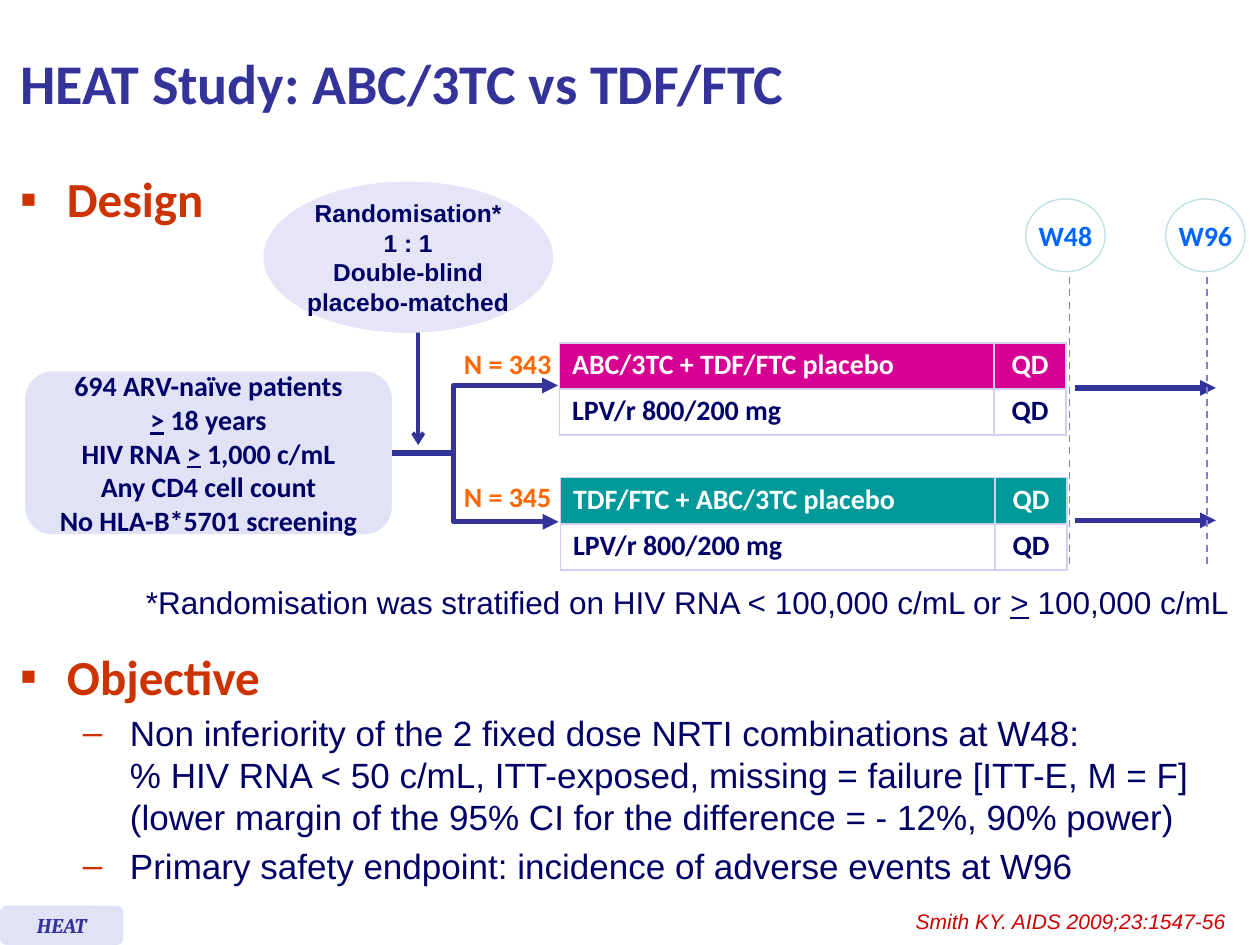
from dataclasses import dataclass
from typing import Optional

from lxml.etree import SubElement
from pptx import Presentation
from pptx.dml.color import RGBColor
from pptx.enum.dml import MSO_LINE
from pptx.enum.shapes import MSO_CONNECTOR, MSO_SHAPE
from pptx.enum.text import MSO_ANCHOR, MSO_AUTO_SIZE, PP_ALIGN
from pptx.oxml.ns import qn
from pptx.util import Cm, Pt

INDIGO = RGBColor(0x33, 0x33, 0x99)
NAVY = RGBColor(0x00, 0x00, 0x66)
RUST = RGBColor(0xCC, 0x33, 0x00)
RED = RGBColor(0xCC, 0x00, 0x00)
ORANGE = RGBColor(0xFF, 0x66, 0x00)
BLUE = RGBColor(0x00, 0x66, 0xFF)
MAGENTA = RGBColor(0xD6, 0x00, 0x93)
TEAL = RGBColor(0x00, 0x99, 0x99)
WHITE = RGBColor(0xFF, 0xFF, 0xFF)
LAVENDER = RGBColor(0xE2, 0xE2, 0xF6)
PALE_LAVENDER = RGBColor(0xE5, 0xE5, 0xF7)
PALE_CYAN = RGBColor(0xBB, 0xE0, 0xE3)
DASH_VIOLET = RGBColor(0x7E, 0x7E, 0xD4)
BORDER = RGBColor(0xD0, 0xD0, 0xF0)


@dataclass
class Style:
    size: float
    color: RGBColor
    name: str = "Calibri"
    bold: bool = True
    italic: bool = False


@dataclass
class Bullet:
    mark: str
    left: float


@dataclass
class Arm:
    label: str
    label_top: float
    regimen: str
    color: RGBColor
    left: float
    top: float
    arrow_y: float


HEADING = Style(28, RUST)
DETAIL = Style(20, NAVY, "Arial", bold=False)
HEADING_BULLET = Bullet("▪", 0.95)
DETAIL_BULLET = Bullet("–", 2.22)
ARMS = [
    Arm("N = 343", 6.86, "ABC/3TC + TDF/FTC placebo", MAGENTA, 11.28, 6.91, 7.82),
    Arm("N = 345", 9.55, "TDF/FTC + ABC/3TC placebo", TEAL, 11.3, 9.63, 10.49),
]
VISITS = [("W48", 20.68, 21.56), ("W96", 23.5, 24.33)]


def write(para, text: str, style: Style, align=PP_ALIGN.LEFT) -> None:
    """Fill a paragraph; a ">" stands for "at least" and is underlined."""
    before, sign, after = text.partition(">")
    para.text = before
    for piece in filter(None, (sign, after)):
        para.add_run().text = piece
    para.alignment = align
    for span in para.runs:
        font = span.font
        font.size, font.name = Pt(style.size), style.name
        font.bold, font.italic = style.bold, style.italic
        font.color.rgb = style.color
        if span.text == ">":
            font.underline = True


def write_lines(frame, lines: list[str], style: Style, align=PP_ALIGN.LEFT) -> None:
    for index, line in enumerate(lines):
        para = frame.add_paragraph() if index else frame.paragraphs[0]
        write(para, line, style, align)


def add_bullet(para, bullet: Bullet) -> None:
    properties = para._p.get_or_add_pPr()
    properties.set("marL", str(Cm(bullet.left)))
    properties.set("indent", str(-Cm(HEADING_BULLET.left)))
    color = SubElement(properties, qn("a:buClr"))
    SubElement(color, qn("a:srgbClr")).set("val", str(RUST))
    SubElement(properties, qn("a:buFont")).set("typeface", "Arial")
    SubElement(properties, qn("a:buChar")).set("char", bullet.mark)


def add_text(page, left: float, top: float, width: float, height: float,
             text: str, style: Style, align=PP_ALIGN.LEFT, wrap=True):
    box = page.shapes.add_textbox(Cm(left), Cm(top), Cm(width), Cm(height))
    box.text_frame.word_wrap = wrap
    write(box.text_frame.paragraphs[0], text, style, align)
    return box


def add_box(page, kind, left: float, top: float, width: float, height: float,
            fill: RGBColor, lines: list[str], style: Style,
            outline: Optional[RGBColor] = None):
    box = page.shapes.add_shape(kind, Cm(left), Cm(top), Cm(width), Cm(height))
    box.shadow.inherit = False
    box.fill.solid()
    box.fill.fore_color.rgb = fill
    if outline is None:
        box.line.fill.background()
    else:
        box.line.color.rgb, box.line.width = outline, Pt(0.75)
    box.text_frame.word_wrap = False
    box.text_frame.vertical_anchor = MSO_ANCHOR.MIDDLE
    write_lines(box.text_frame, lines, style, PP_ALIGN.CENTER)
    return box


def add_line(page, x1: float, y1: float, x2: float, y2: float,
             color=INDIGO, width: float = 3, dash=None, head=None, tail=None,
             kind=MSO_CONNECTOR.STRAIGHT):
    line = page.shapes.add_connector(kind, Cm(x1), Cm(y1), Cm(x2), Cm(y2))
    line.line.color.rgb, line.line.width = color, Pt(width)
    if dash:
        line.line.dash_style = dash
    properties = line._element.spPr
    outline = properties.find(qn("a:ln"))
    for tag, arrow in (("a:headEnd", head), ("a:tailEnd", tail)):
        if arrow:
            SubElement(outline, qn(tag)).set("type", arrow)
    SubElement(properties, qn("a:effectLst"))
    return line


def add_regimen_table(page, arm: Arm) -> None:
    widths, row_height = (8.76, 1.45), 0.93
    table = page.shapes.add_table(2, 2, Cm(arm.left), Cm(arm.top),
                                  Cm(sum(widths)), Cm(2 * row_height)).table
    table.first_row = table.horz_banding = False
    for column, width in zip(table.columns, widths):
        column.width = Cm(width)
    for row, first in zip(table.rows, (arm.regimen, "LPV/r 800/200 mg")):
        row.height = Cm(row_height)
        header = first == arm.regimen
        style = Style(16, WHITE if header else NAVY)
        for cell, text, align in zip(row.cells, (first, "QD"),
                                     (PP_ALIGN.LEFT, PP_ALIGN.CENTER)):
            cell.vertical_anchor = MSO_ANCHOR.MIDDLE
            para = cell.text_frame.paragraphs[0]
            write(para, text, style, align)
            para.line_spacing = 0.8
            for side in "LRTB":
                edge = SubElement(cell._tc.get_or_add_tcPr(), qn(f"a:ln{side}"))
                edge.set("w", str(Pt(1)))
                fill = SubElement(edge, qn("a:solidFill"))
                SubElement(fill, qn("a:srgbClr")).set("val", str(BORDER))
            if header:
                cell.fill.solid()
                cell.fill.fore_color.rgb = arm.color
            else:
                cell.fill.background()


def main() -> None:
    deck = Presentation()
    deck.slide_width, deck.slide_height = Cm(25.4), Cm(19.05)
    page = deck.slides.add_slide(deck.slide_layouts[5])

    # Title and section headings
    title = page.shapes.title
    title.left, title.top, title.width, title.height = Cm(0.15), Cm(0.13), Cm(22.76), Cm(3.07)
    title.text_frame.auto_size = MSO_AUTO_SIZE.NONE
    title.text_frame.vertical_anchor = MSO_ANCHOR.MIDDLE
    write(title.text_frame.paragraphs[0], "HEAT Study: ABC/3TC vs TDF/FTC", Style(32, INDIGO))
    design = add_text(page, 0.15, 3.28, 5.16, 1.45, "Design", HEADING)
    objective = add_text(page, 0.15, 12.9, 25.07, 5, "Objective", HEADING)
    for section in (design, objective):
        add_bullet(section.text_frame.paragraphs[0], HEADING_BULLET)
    for text in ("Non inferiority of the 2 fixed dose NRTI combinations at W48: \v"
                 "% HIV RNA < 50 c/mL, ITT-exposed, missing = failure [ITT-E, M = F] "
                 "(lower margin of the 95% CI for the difference = - 12%, 90% power)",
                 "Primary safety endpoint: incidence of adverse events at W96"):
        para = objective.text_frame.add_paragraph()
        para.level = 1
        para.space_before = Pt(4)
        add_bullet(para, DETAIL_BULLET)
        write(para, text, DETAIL)

    # Randomisation and patients
    add_line(page, 8.43, 6.6, 8.43, 8.97, width=2.25, tail="arrow")
    add_box(page, MSO_SHAPE.OVAL, 5.31, 3.66, 5.84, 3.05, PALE_LAVENDER,
            ["Randomisation*", "1 : 1", "Double-blind", "placebo-matched"],
            Style(14, NAVY, "Arial"))
    patients = add_box(page, MSO_SHAPE.ROUNDED_RECTANGLE, 0.51, 7.49, 7.39, 3.28, LAVENDER,
                       ["694 ARV-naïve patients", "> 18 years", "HIV RNA > 1,000 c/mL",
                        "Any CD4 cell count", "No HLA-B*5701 screening"], Style(16, NAVY))
    stub = add_line(page, 7.9, 9.13, 9.09, 9.13)
    stub.begin_connect(patients, 3)

    # Fork to both arms: the bend lies 2.11 cm left of the nearly equal ends
    fork = add_line(page, 11.25, 7.77, 11.26, 10.52, head="triangle", tail="triangle",
                    kind=MSO_CONNECTOR.ELBOW)
    guides = fork._element.spPr.find(qn("a:prstGeom")).get_or_add_avLst()
    guide = SubElement(guides, qn("a:gd"))
    guide.set("name", "adj1")
    guide.set("fmla", "val -21100000")

    # Treatment arms
    for arm in ARMS:
        add_regimen_table(page, arm)
        add_text(page, 9.09, arm.label_top, 2.29, 0.94, arm.label,
                 Style(16, ORANGE), PP_ALIGN.CENTER)
        add_line(page, 21.67, arm.arrow_y, 24.51, arm.arrow_y, tail="triangle")

    # Visits
    for week, left, line_x in VISITS:
        add_box(page, MSO_SHAPE.OVAL, left, 4.01, 1.6, 1.47, WHITE, [week],
                Style(16, BLUE), PALE_CYAN)
        add_line(page, line_x, 5.59, line_x, 11.46, DASH_VIOLET, 1, MSO_LINE.DASH)

    # Footnote, study badge and citation
    add_text(page, 2.69, 11.63, 22.38, 1.02,
             "*Randomisation was stratified on HIV RNA < 100,000 c/mL or > 100,000 c/mL",
             Style(18, NAVY, "Arial", bold=False), wrap=False)
    add_box(page, MSO_SHAPE.ROUNDED_RECTANGLE, 0, 18.26, 2.49, 0.79, LAVENDER, ["HEAT"],
            Style(12, INDIGO, "Cambria", italic=True))
    add_text(page, 18.21, 18.19, 6.81, 0.76, "Smith KY. AIDS 2009;23:1547-56",
             Style(12, RED, "Arial", bold=False, italic=True), wrap=False)

    deck.save("out.pptx")


if __name__ == "__main__":
    main()
